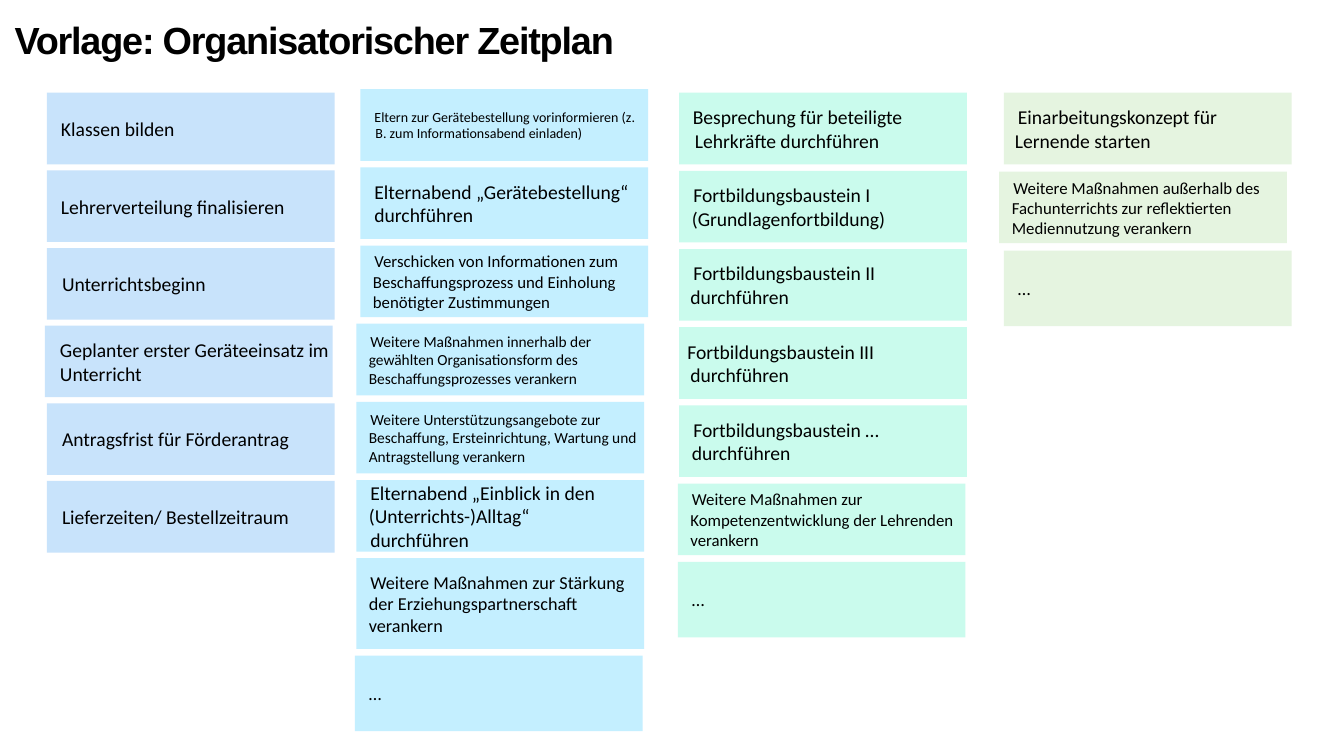
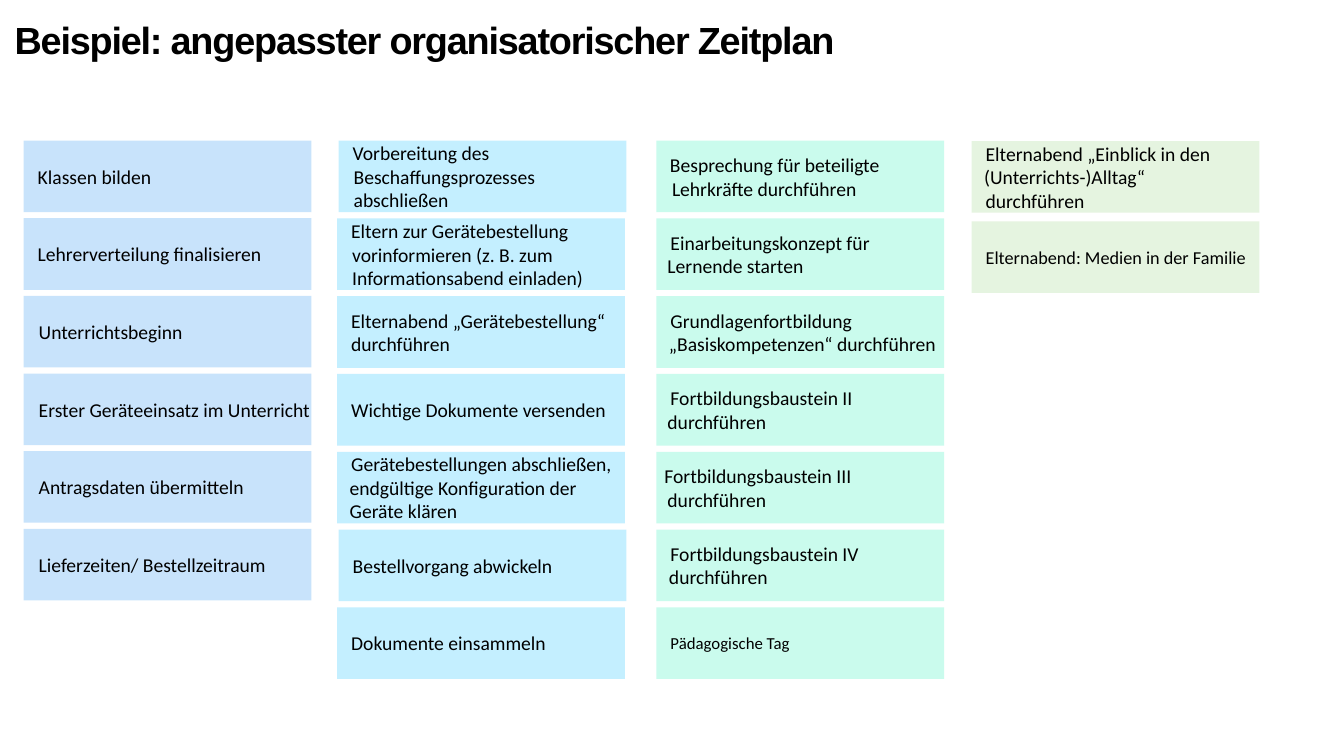
from dataclasses import dataclass

from pptx import Presentation
from pptx.dml.color import RGBColor
from pptx.enum.shapes import MSO_SHAPE
from pptx.enum.text import MSO_ANCHOR, MSO_AUTO_SIZE, PP_ALIGN
from pptx.util import Inches, Pt

BLACK = RGBColor(0x00, 0x00, 0x00)
SCHOOL_BLUE = RGBColor(0xC8, 0xE3, 0xFB)
PARENT_CYAN = RGBColor(0xC4, 0xEF, 0xFF)
TRAINING_MINT = RGBColor(0xCA, 0xFB, 0xED)
LEARNING_GREEN = RGBColor(0xE5, 0xF4, 0xE0)

FIRST_LINE = (0, 0.28)
SLIGHT = (0.22, 0.06)
STANDARD = (0.25, 0.03)
EVEN = (0.3, 0)
HANGING = (0.3, -0.02)
DEEP = (0.31, -0.04)
OUTDENT = (0.22, -0.06)


@dataclass
class Card:
    """One measure; shift and height are percentages of the slide."""
    text: str
    indent: tuple = STANDARD
    size: int = 28
    shift: float = 0
    height: float = 9.47


@dataclass
class Column:
    """A stack of cards; left, top and gap are percentages of the slide."""
    left: float
    top: float
    gap: float
    color: RGBColor
    cards: list


class Schedule:
    """Holds the deck, its style and the current page."""

    card_width = 21.41

    def __init__(self):
        """Open a deck in the large wide format."""
        self.deck = Presentation()
        self.deck.slide_width = Inches(26.67)
        self.deck.slide_height = Inches(15)
        self.page = None

    def across(self, share):
        """Turn a percentage of the width into a length."""
        return round(self.deck.slide_width * share / 100)

    def down(self, share):
        """Turn a percentage of the height into a length."""
        return round(self.deck.slide_height * share / 100)

    def place(self, box, left, top, width, height):
        """Move a box to its percentages of the slide."""
        box.left, box.top = self.across(left), self.down(top)
        box.width, box.height = self.across(width), self.down(height)

    def set_frame(self, frame, margin, anchor):
        """Give a text frame even margins, wrapping and an anchor."""
        frame.margin_left = frame.margin_right = Inches(margin)
        frame.margin_top = frame.margin_bottom = Inches(margin)
        frame.word_wrap = True
        frame.auto_size = MSO_AUTO_SIZE.NONE
        frame.vertical_anchor = anchor

    def set_font(self, para, name, size, bold=False):
        """Format a paragraph in black, aligned left."""
        para.alignment = PP_ALIGN.LEFT
        para.font.name = name
        para.font.size = Pt(size)
        para.font.bold = bold
        para.font.color.rgb = BLACK

    def add_page(self, title):
        """Start a page with its title."""
        self.page = self.deck.slides.add_slide(self.deck.slide_layouts[5])
        box = self.page.shapes.title
        self.place(box, 0.86, 3, 90.1, 10.47)
        self.set_frame(box.text_frame, 0.06, MSO_ANCHOR.TOP)
        box.text_frame.text = title
        para = box.text_frame.paragraphs[0]
        para.line_spacing = 0.8
        self.set_font(para, "Arial", 54, bold=True)
        para.runs[0].font._element.set("spc", "-170")

    def add_card(self, card, left, top, color):
        """Draw one coloured card with its text."""
        box = self.page.shapes.add_shape(MSO_SHAPE.RECTANGLE, 0, 0, 0, 0)
        self.place(box, left + card.shift, top, self.card_width, card.height)
        box.shadow.inherit = False
        box.fill.solid()
        box.fill.fore_color.rgb = color
        box.line.fill.background()
        self.set_frame(box.text_frame, 0, MSO_ANCHOR.MIDDLE)
        box.text_frame.text = card.text
        margin, first = card.indent
        for para in box.text_frame.paragraphs:
            self.set_font(para, "Calibri", card.size)
            properties = para._p.get_or_add_pPr()
            properties.set("marL", str(Inches(margin)))
            properties.set("indent", str(Inches(first)))

    def add_column(self, column):
        """Stack the cards of a column with equal gaps."""
        top = column.top
        for card in column.cards:
            self.add_card(card, column.left, top, column.color)
            top += card.height + column.gap


CLASSES = Card("Klassen bilden", FIRST_LINE)
TEACHERS = Card("Lehrerverteilung finalisieren", FIRST_LINE)
START = Card("Unterrichtsbeginn", EVEN)
DELIVERY = Card("Lieferzeiten/ Bestellzeitraum", EVEN)
ORDER_EVENING = Card("Elternabend „Gerätebestellung“\ndurchführen", SLIGHT)
INSIGHT_EVENING = "Elternabend „Einblick in den (Unterrichts-)Alltag“\ndurchführen"
PARENT_NOTICE = "Eltern zur Gerätebestellung vorinformieren (z. B. zum Informationsabend einladen)"
MEETING = Card("Besprechung für beteiligte Lehrkräfte durchführen", DEEP)
INTRODUCTION = Card("Einarbeitungskonzept für Lernende starten", SLIGHT)
MODULE_TWO = Card("Fortbildungsbaustein II durchführen", SLIGHT)
MODULE_THREE = Card("Fortbildungsbaustein III durchführen", OUTDENT)

TEMPLATE_COLUMNS = [
    Column(3.49, 12.27, 0.8, SCHOOL_BLUE, [
        CLASSES,
        TEACHERS,
        START,
        Card("Geplanter erster Geräteeinsatz im Unterricht", EVEN, shift=-0.15),
        Card("Antragsfrist für Förderantrag", EVEN),
        DELIVERY,
    ]),
    Column(26.81, 11.8, 0.87, PARENT_CYAN, [
        Card(PARENT_NOTICE, HANGING, 20),
        ORDER_EVENING,
        Card("Verschicken von Informationen zum Beschaffungsprozess und "
             "Einholung benötigter Zustimmungen", size=24),
        Card("Weitere Maßnahmen innerhalb der gewählten Organisationsform "
             "des Beschaffungsprozesses verankern", size=22, shift=-0.3),
        Card("Weitere Unterstützungsangebote zur Beschaffung, Ersteinrichtung, "
             "Wartung und Antragstellung verankern", size=22, shift=-0.3),
        Card(INSIGHT_EVENING, shift=-0.3),
        Card("Weitere Maßnahmen zur Stärkung der Erziehungspartnerschaft "
             "verankern", size=26, shift=-0.3, height=12),
        Card("…", size=26, shift=-0.41, height=10),
    ]),
    Column(50.54, 12.27, 0.87, TRAINING_MINT, [
        MEETING,
        Card("Fortbildungsbaustein I (Grundlagenfortbildung)"),
        MODULE_TWO,
        MODULE_THREE,
        Card("Fortbildungsbaustein … durchführen"),
        Card("Weitere Maßnahmen zur Kompetenzentwicklung der Lehrenden "
             "verankern", size=24, shift=-0.11),
        Card("…", size=26, shift=-0.11, height=10),
    ]),
    Column(74.69, 12.27, 0.97, LEARNING_GREEN, [
        INTRODUCTION,
        Card("Weitere Maßnahmen außerhalb des Fachunterrichts zur "
             "reflektierten Mediennutzung verankern", size=24, shift=-0.34),
        Card("…", size=26, height=10),
    ]),
]

EXAMPLE_COLUMNS = [
    Column(1.76, 18.6, 0.8, SCHOOL_BLUE, [
        CLASSES,
        TEACHERS,
        START,
        Card("Erster Geräteeinsatz im Unterricht", EVEN),
        Card("Antragsdaten übermitteln", EVEN),
        DELIVERY,
    ]),
    Column(25.08, 18.6, 0.82, PARENT_CYAN, [
        Card("Vorbereitung des Beschaffungsprozesses abschließen", HANGING,
             shift=0.11),
        Card(PARENT_NOTICE, HANGING),
        ORDER_EVENING,
        Card("Wichtige Dokumente versenden"),
        Card("Gerätebestellungen abschließen, endgültige Konfiguration der "
             "Geräte klären"),
        Card("Bestellvorgang abwickeln", FIRST_LINE, shift=0.11),
        Card("Dokumente einsammeln", FIRST_LINE),
    ]),
    Column(48.84, 18.6, 0.82, TRAINING_MINT, [
        MEETING,
        INTRODUCTION,
        Card("Grundlagenfortbildung „Basiskompetenzen“ durchführen"),
        MODULE_TWO,
        MODULE_THREE,
        Card("Fortbildungsbaustein IV durchführen"),
        Card("Pädagogische Tag", size=24),
    ]),
    Column(72.29, 18.67, 1.13, LEARNING_GREEN, [
        Card(INSIGHT_EVENING),
        Card("Elternabend: Medien in der Familie", size=26),
    ]),
]

PAGES = {
    "Vorlage: Organisatorischer Zeitplan": TEMPLATE_COLUMNS,
    "Beispiel: angepasster organisatorischer Zeitplan": EXAMPLE_COLUMNS,
}


def main():
    """Build both schedules and save the deck."""
    schedule = Schedule()
    for title, columns in PAGES.items():
        schedule.add_page(title)
        for column in columns:
            schedule.add_column(column)
    schedule.deck.save("out.pptx")


if __name__ == "__main__":
    main()
